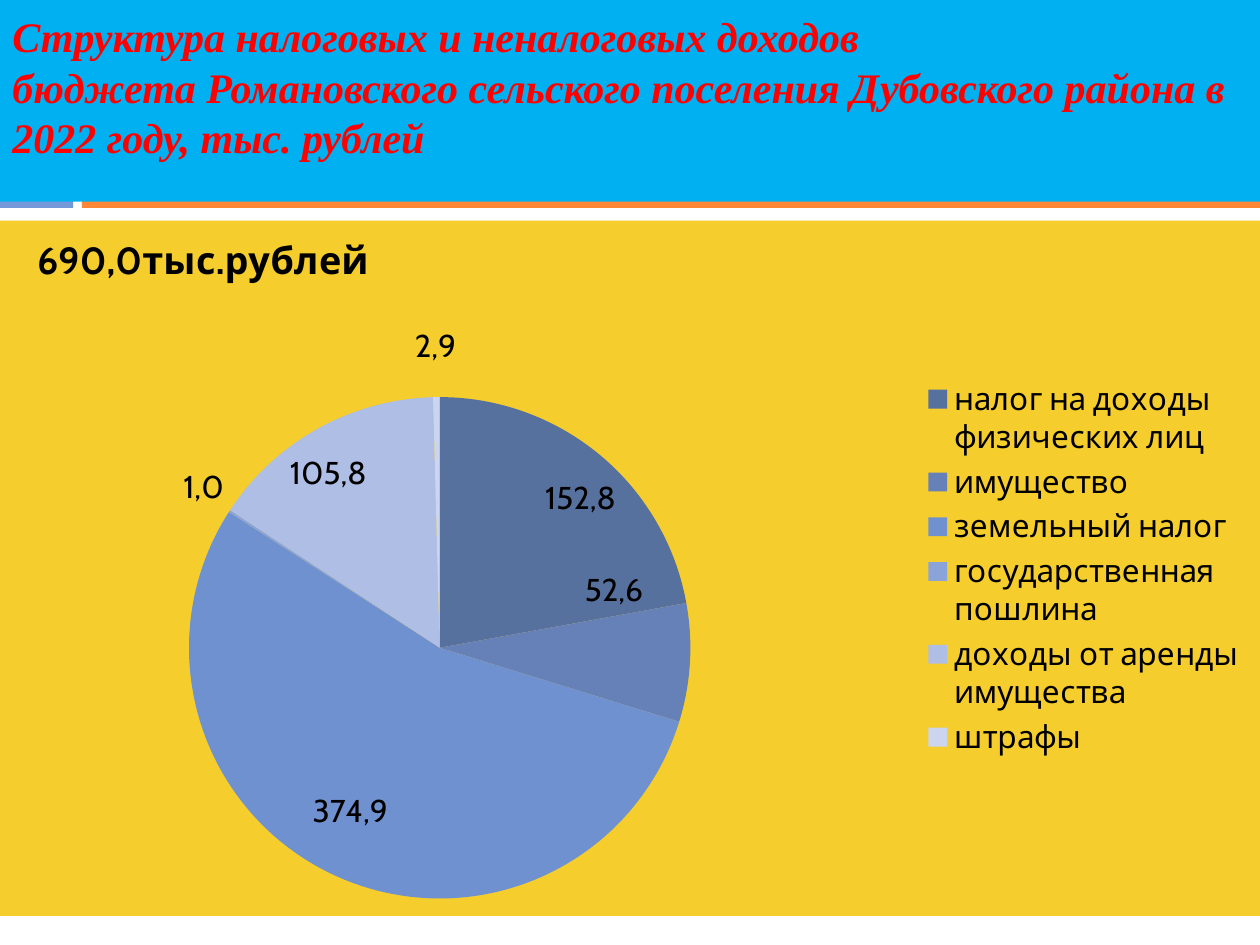
"""Build the slide on the structure of a rural settlement's budget revenue."""
from math import cos, pi, sin

from pptx import Presentation
from pptx.chart.data import CategoryChartData
from pptx.dml.color import RGBColor
from pptx.enum.chart import XL_CHART_TYPE, XL_LABEL_POSITION, XL_LEGEND_POSITION
from pptx.enum.shapes import MSO_SHAPE
from pptx.enum.text import MSO_ANCHOR, PP_ALIGN
from pptx.oxml import parse_xml
from pptx.oxml.ns import nsdecls
from pptx.util import Inches, Pt

BLACK = RGBColor(0x00, 0x00, 0x00)
RED = RGBColor(0xFF, 0x00, 0x00)
SKY = RGBColor(0x00, 0xB0, 0xF0)
BLUE = RGBColor(0x75, 0x98, 0xD9)
ORANGE = RGBColor(0xFE, 0x86, 0x37)
YELLOW = RGBColor(0xF5, 0xCD, 0x2D)

HEADING = (
    "Структура налоговых и неналоговых доходов\v"
    "бюджета Романовского сельского поселения Дубовского района в 2022 году, тыс. рублей"
)
CHART_TITLE = "690,0тыс.рублей"
SERIES_NAME = "690,0 тыс.рублей"
CHART_FONT = "Cabin"
BANDS = [
    ((0, 1.4, 0.58, 0.25), BLUE),
    ((0.65, 1.4, 9.35, 0.25), ORANGE),
    ((0, -0.23, 10, 1.83), SKY),
]
# name, value, slice colour, label centre on the slide in inches
REVENUES = [
    ("налог на доходы физических лиц", 152.8, RGBColor(0x57, 0x71, 0x9F), (4.61, 3.95)),
    ("имущество", 52.6, RGBColor(0x65, 0x81, 0xB8), (4.87, 4.68)),
    ("земельный налог", 374.9, RGBColor(0x6F, 0x91, 0xD0), (2.78, 6.44)),
    ("государственная пошлина", 1, RGBColor(0x8A, 0xA4, 0xDA), (1.62, 3.87)),
    ("доходы от аренды имущества", 105.8, RGBColor(0xAF, 0xBE, 0xE4), (2.61, 3.76)),
    ("штрафы", 2.9, RGBColor(0xCB, 0xD5, 0xF0), (3.46, 2.75)),
]
CHART_LEFT, CHART_TOP, CHART_WIDTH, CHART_HEIGHT = 0, 1.75, 10, 5.52
TITLE_X, TITLE_Y = 0.24, 0.05
PIE_X, PIE_Y, PIE_RADIUS = 3.49, 5.14, 1.99


def style_font(font, size, color, bold=False, name=CHART_FONT):
    font.name, font.size, font.bold = name, Pt(size), bold
    font.color.rgb = color


def layout_xml(x, y, width=None, height=None, inner=False, edge=True):
    target = '<c:layoutTarget val="inner"/>' if inner else ""
    modes = '<c:xMode val="edge"/><c:yMode val="edge"/>' if edge else ""
    extent = f'<c:w val="{width:.3f}"/><c:h val="{height:.3f}"/>' if width else ""
    return parse_xml(
        f'<c:layout {nsdecls("c")}><c:manualLayout>{target}{modes}'
        f'<c:x val="{x:.3f}"/><c:y val="{y:.3f}"/>{extent}</c:manualLayout></c:layout>'
    )


def set_layout(element, layout, after=None):
    for old in element.xpath("./c:layout"):
        element.remove(old)
    if after:
        element.xpath(f"./{after}")[0].addnext(layout)
    else:
        element.insert(0, layout)


def add_bands(slide):
    for place, color in BANDS:
        band = slide.shapes.add_shape(MSO_SHAPE.RECTANGLE, *map(Inches, place))
        band.shadow.inherit = False
        band.fill.solid()
        band.fill.fore_color.rgb = color
        band.line.fill.background()
    return band


def add_heading(band):
    frame = band.text_frame
    frame.word_wrap = True
    frame.vertical_anchor = MSO_ANCHOR.MIDDLE
    para = frame.paragraphs[0]
    para.text = HEADING
    para.alignment = PP_ALIGN.LEFT
    style_font(para.font, 24, RED, True, "Times New Roman")
    para.font.italic = True


def style_slices(series):
    labels = series.data_labels
    labels.show_value = labels.show_category_name = labels.show_series_name = True
    total = sum(revenue[1] for revenue in REVENUES)
    passed = 0
    for index, (_, value, color, (x, y)) in enumerate(REVENUES):
        point = series.points[index]
        point.format.fill.solid()
        point.format.fill.fore_color.rgb = color
        label = point.data_label
        span = label.text_frame.paragraphs[0].add_run()
        span.text = f"{value:.1f}".replace(".", ",")
        style_font(span.font, 18, BLACK)
        label.position = XL_LABEL_POSITION.CENTER
        angle = 2 * pi * (passed + value / 2) / total
        passed += value
        shift_x = (x - PIE_X - PIE_RADIUS / 2 * sin(angle)) / CHART_WIDTH
        shift_y = (y - PIE_Y + PIE_RADIUS / 2 * cos(angle)) / CHART_HEIGHT
        element = series._element.xpath(f"./c:dLbls/c:dLbl[c:idx/@val='{index}']")[0]
        set_layout(element, layout_xml(shift_x, shift_y, edge=False), "c:idx")
    for leader in series._element.xpath("./c:dLbls/c:showLeaderLines"):
        leader.set("val", "0")


def add_revenue_chart(slide):
    data = CategoryChartData()
    data.categories = [revenue[0] for revenue in REVENUES]
    data.add_series(SERIES_NAME, [revenue[1] for revenue in REVENUES])
    place = map(Inches, (CHART_LEFT, CHART_TOP, CHART_WIDTH, CHART_HEIGHT))
    chart = slide.shapes.add_chart(XL_CHART_TYPE.PIE, *place, data).chart
    style_font(chart.font, 18, BLACK)
    chart.has_title = True
    span = chart.chart_title.text_frame.paragraphs[0].add_run()
    span.text = CHART_TITLE
    style_font(span.font, 21.6, BLACK, True)
    chart.has_legend = True
    chart.legend.position = XL_LEGEND_POSITION.RIGHT
    chart.legend.include_in_layout = False
    chart.plots[0].vary_by_categories = True
    style_slices(chart.plots[0].series[0])

    space = chart._chartSpace
    title_layout = layout_xml(TITLE_X / CHART_WIDTH, TITLE_Y / CHART_HEIGHT)
    set_layout(space.xpath("./c:chart/c:title")[0], title_layout, "c:tx")
    set_layout(space.xpath(".//c:legend")[0], layout_xml(0.73, 0.22, 0.26, 0.56), "c:legendPos")
    pie_layout = layout_xml(
        (PIE_X - PIE_RADIUS - CHART_LEFT) / CHART_WIDTH,
        (PIE_Y - PIE_RADIUS - CHART_TOP) / CHART_HEIGHT,
        2 * PIE_RADIUS / CHART_WIDTH,
        2 * PIE_RADIUS / CHART_HEIGHT,
        inner=True,
    )
    set_layout(space.xpath(".//c:plotArea")[0], pie_layout)
    space.xpath("./c:chart")[0].addnext(parse_xml(
        f'<c:spPr {nsdecls("c", "a")}><a:solidFill><a:srgbClr val="{YELLOW}"/></a:solidFill>'
        "<a:ln><a:noFill/></a:ln></c:spPr>"
    ))


def main():
    deck = Presentation()
    deck.slide_width, deck.slide_height = Inches(10), Inches(7.5)
    slide = deck.slides.add_slide(deck.slide_layouts[6])
    add_heading(add_bands(slide))
    add_revenue_chart(slide)
    deck.save("out.pptx")


if __name__ == "__main__":
    main()
